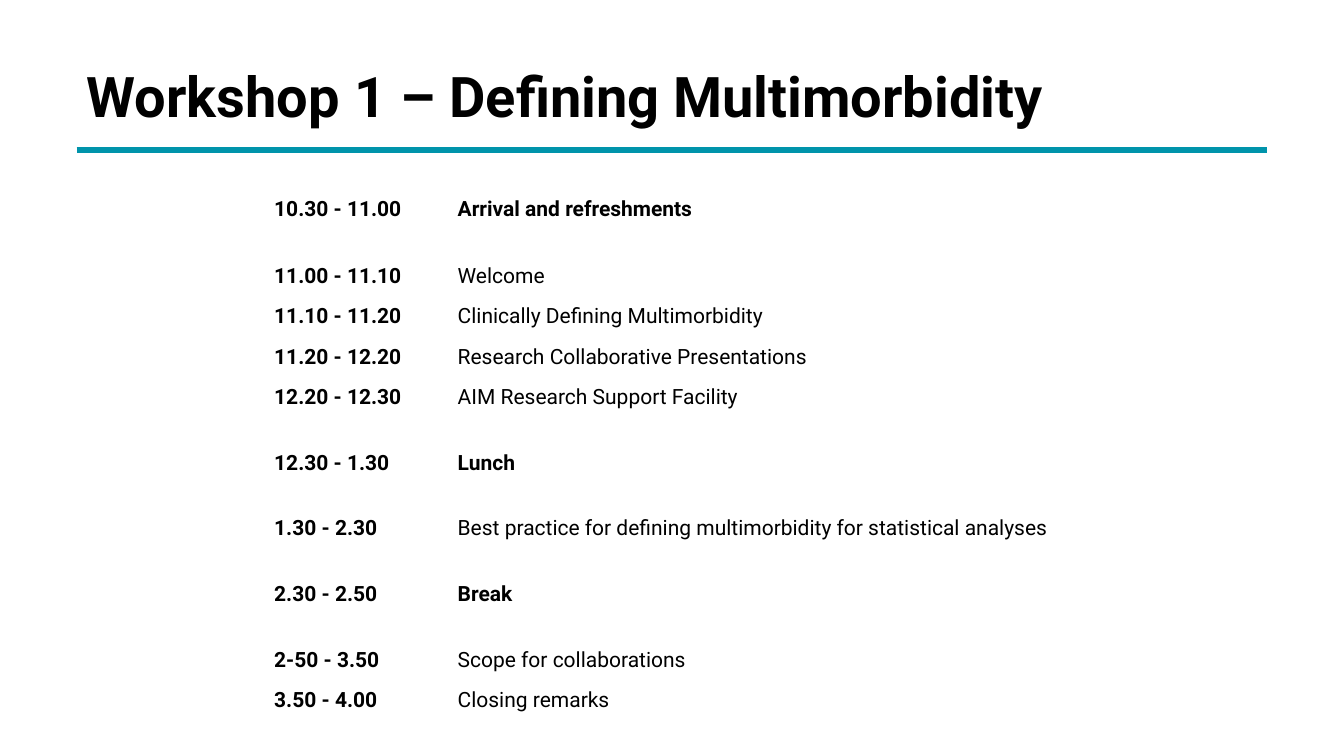
from lxml import etree
from pptx import Presentation
from pptx.dml.color import RGBColor
from pptx.enum.shapes import MSO_CONNECTOR as Line
from pptx.enum.text import MSO_ANCHOR as Anchor, MSO_AUTO_SIZE as Fit, PP_ALIGN as Align
from pptx.oxml.ns import qn
from pptx.util import Inches, Pt


def color(code):
    return RGBColor.from_string(code)


def write(frame, text, size=15, bold=False, space=1.07, font="Roboto", ink="000000"):
    para = frame.paragraphs[0]
    para.alignment = Align.LEFT
    para.line_spacing = space
    run = para.add_run()
    run.text = text
    run.font.name = font
    run.font.size = Pt(size)
    run.font.bold = bold
    run.font.color.rgb = color(ink)


deck = Presentation()
deck.slide_width = Inches(13.33)
deck.slide_height = Inches(7.5)
slide = deck.slides.add_slide(deck.slide_layouts[5])

title = slide.shapes.title
title.left, title.top = Inches(0.76), Inches(0.48)
title.width, title.height = Inches(11.25), Inches(1.01)
frame = title.text_frame
frame.word_wrap = True
frame.auto_size = Fit.NONE
frame.vertical_anchor = Anchor.MIDDLE
write(frame, "Workshop 1 – Defining Multimorbidity", size=40, bold=True, space=0.9)

rule = slide.shapes.add_connector(
    Line.STRAIGHT, Inches(0.76), Inches(1.49), Inches(12.57), Inches(1.49))
rule.line.color.rgb = color("0094AB")
rule.line.width = Pt(4.5)
etree.SubElement(rule._element.spPr, qn("a:effectLst"))

agenda = [
    ("10.30 - 11.00", "Arrival and refreshments", 0.66, True),
    ("11.00 - 11.10", "Welcome", 0.39, False),
    ("11.10 - 11.20", "Clinically Defining Multimorbidity", 0.39, False),
    ("11.20 - 12.20", "Research Collaborative Presentations", 0.39, False),
    ("12.20 - 12.30", "AIM Research Support Facility", 0.39, False),
    ("12.30 - 1.30", "Lunch", 0.9, True),
    ("1.30 - 2.30", "Best practice for defining multimorbidity for statistical analyses", 0.39, False),
    ("2.30 - 2.50", "Break", 0.9, True),
    ("2-50 - 3.50", "Scope for collaborations", 0.39, False),
    ("3.50 - 4.00", "Closing remarks", 0.39, False),
]

total = sum(high for _, _, high, _ in agenda)
table = slide.shapes.add_table(
    len(agenda), 2, Inches(2.65), Inches(1.87), Inches(8.4), Inches(total)).table
table.first_row = False
table.horz_banding = False
table.columns[0].width = Inches(1.82)
table.columns[1].width = Inches(6.58)

for row, (time, topic, high, bold) in enumerate(agenda):
    table.rows[row].height = Inches(high)
    for col, (text, heavy) in enumerate([(time, True), (topic, bold)]):
        cell = table.cell(row, col)
        cell.fill.background()
        cell.vertical_anchor = Anchor.MIDDLE if row else Anchor.TOP
        cell.margin_left = cell.margin_right = Inches(0.07)
        cell.margin_top = cell.margin_bottom = Inches(0.07)
        write(cell.text_frame, text, bold=heavy)

deck.save("out.pptx")
